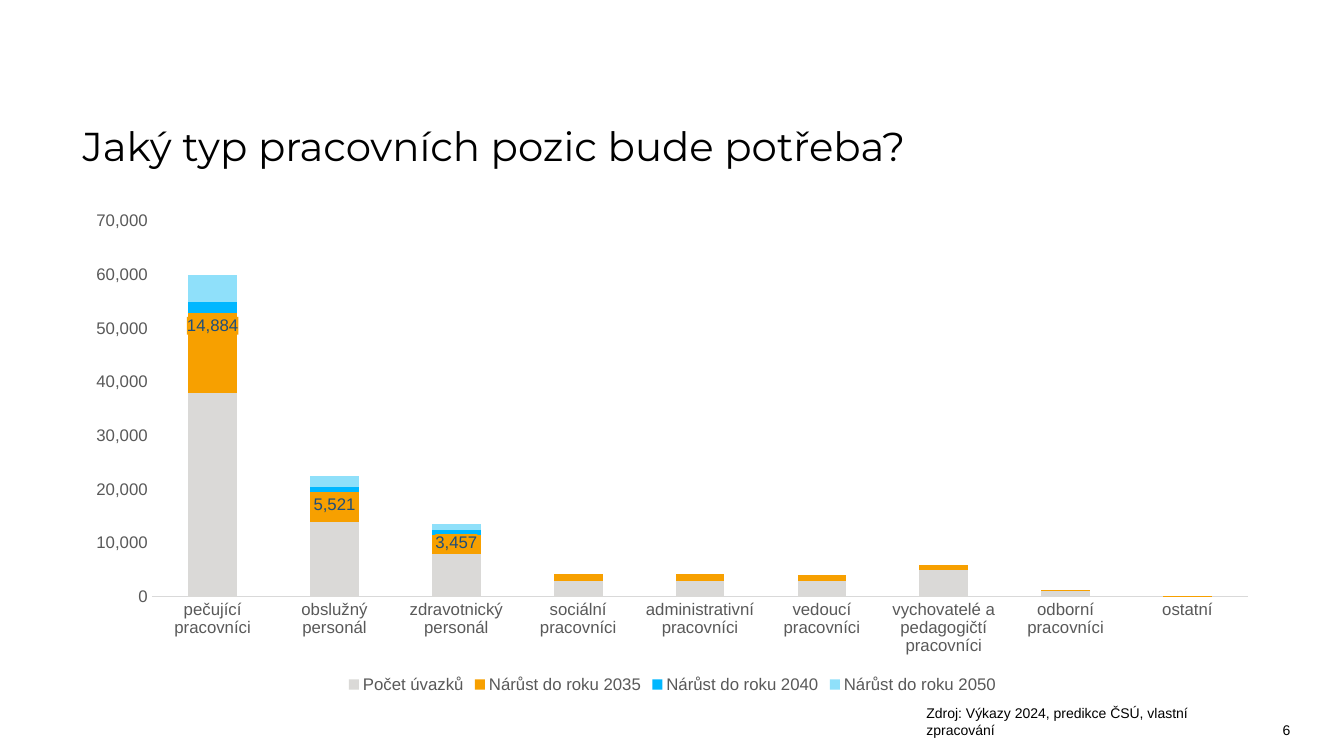
from copy import deepcopy
from lxml.etree import SubElement
from pptx import Presentation
from pptx.chart.data import CategoryChartData
from pptx.dml.color import RGBColor
from pptx.enum.chart import XL_CHART_TYPE, XL_LABEL_POSITION, XL_LEGEND_POSITION, XL_TICK_MARK
from pptx.enum.text import MSO_ANCHOR, PP_ALIGN
from pptx.oxml import parse_xml
from pptx.oxml.ns import nsdecls, qn
from pptx.util import Inches, Pt

# Content
TITLE = "Jaký typ pracovních pozic bude potřeba?"
SOURCE = "Zdroj: Výkazy 2024, predikce ČSÚ, vlastní zpracování"
PAGE = "6"
GREY, ORANGE = RGBColor(0xDA, 0xD9, 0xD7), RGBColor(0xF7, 0xA0, 0x00)
BLUE, LIGHT_BLUE = RGBColor(0x00, 0xB7, 0xFF), RGBColor(0x8F, 0xE0, 0xFA)
BLACK, AXIS_TEXT = RGBColor(0, 0, 0), RGBColor(0x59, 0x59, 0x59)
AXIS_LINE, LABEL_TEXT = RGBColor(0xD9, 0xD9, 0xD9), RGBColor(0x1F, 0x4E, 0x79)
POSITIONS = [
    "pečující pracovníci", "obslužný personál", "zdravotnický personál",
    "sociální pracovníci", "administrativní pracovníci", "vedoucí pracovníci",
    "vychovatelé a pedagogičtí pracovníci", "odborní pracovníci", "ostatní",
]
STAFFING = [
    ("Počet úvazků", GREY, (38000, 14000, 8000, 3000, 3000, 3000, 5000, 1000, 0)),
    ("Nárůst do roku 2035", ORANGE, (14884, 5521, 3457, 1263, 1249, 1007, 850, 241, 88)),
    ("Nárůst do roku 2040", BLUE, (2000, 1000, 1000, 0, 0, 0, 0, 0, 0)),
    ("Nárůst do roku 2050", LIGHT_BLUE, (5000, 2000, 1000, 0, 0, 0, 0, 0, 0)),
]
LABELLED = 3  # only the first positions carry a value label
NUMBER_FORMAT = "#,##0"

# Places in inches: left, top, width, height
TITLE_BOX = (0.72, 1.19, 10.33, 0.57)
CHART_BOX = (0.72, 2, 11.9, 4.92)
SOURCE_BOX = (9.09, 6.94, 3.1, 0.44)
PAGE_BOX = (12.19, 7.08, 1.14, 0.32)
# Shares of the chart's size
PLOT_SHARES = {"x": 0.066, "y": 0.039, "w": 0.914, "h": 0.758}
LABEL_SHIFT = {"x": 0, "y": -0.01}


def style(font, size, color, name="Arial"):
    font.name, font.size, font.color.rgb = name, Pt(size), color


def add_note(slide, text, box, align, anchor):
    frame = slide.shapes.add_textbox(*map(Inches, box)).text_frame
    frame.word_wrap = True
    frame.vertical_anchor = anchor
    frame.text = text
    frame.paragraphs[0].alignment = align
    style(frame.paragraphs[0].runs[0].font, 10, BLACK)


def set_layout(layout, settings):
    manual = SubElement(layout, qn("c:manualLayout"))
    for tag, value in settings.items():
        SubElement(manual, qn(f"c:{tag}")).set("val", str(value))


def add_value_labels(series):
    labels = series.data_labels
    labels.show_value = True
    labels.position = XL_LABEL_POSITION.INSIDE_END
    labels.number_format, labels.number_format_is_linked = NUMBER_FORMAT, False
    style(labels.font, 12, LABEL_TEXT)
    label_xml = labels._element
    label_xml.find(qn("c:txPr")).addprevious(parse_xml(
        f'<c:spPr {nsdecls("c", "a")}><a:solidFill><a:srgbClr val="{ORANGE}"/>'
        '</a:solidFill></c:spPr>'))

    # The last visible label sits a little higher; later ones are hidden
    shared = [deepcopy(part) for part in label_xml if part.tag != qn("c:showLeaderLines")]
    for place, point in enumerate(range(LABELLED - 1, len(POSITIONS))):
        label = parse_xml(f'<c:dLbl {nsdecls("c")}><c:idx val="{point}"/></c:dLbl>')
        if point < LABELLED:
            set_layout(SubElement(label, qn("c:layout")), LABEL_SHIFT)
            label.extend(shared)
        else:
            SubElement(label, qn("c:delete")).set("val", "1")
        label_xml.insert(place, label)


def add_staffing_chart(slide):
    data = CategoryChartData(number_format=NUMBER_FORMAT)
    data.categories = POSITIONS
    for name, _, values in STAFFING:
        data.add_series(name, values)
    chart = slide.shapes.add_chart(
        XL_CHART_TYPE.COLUMN_STACKED, *map(Inches, CHART_BOX), data).chart
    style(chart.font, 12, BLACK)
    chart.has_title = False

    # Stacked columns
    plot = chart.plots[0]
    plot.gap_width, plot.overlap = 150, 100
    plot.vary_by_categories = False
    for series, (_, color, _) in zip(plot.series, STAFFING):
        series.format.fill.solid()
        series.format.fill.fore_color.rgb = color
    add_value_labels(plot.series[1])

    # Axes and legend
    for axis in (chart.category_axis, chart.value_axis):
        axis.major_tick_mark = axis.minor_tick_mark = XL_TICK_MARK.NONE
        axis.has_major_gridlines = False
        style(axis.tick_labels.font, 12, AXIS_TEXT)
    chart.category_axis.format.line.color.rgb = AXIS_LINE
    chart.category_axis.format.line.width = Pt(0.75)
    scale = chart.value_axis
    scale.minimum_scale, scale.maximum_scale, scale.major_unit = 0, 70000, 10000
    scale.tick_labels.number_format = NUMBER_FORMAT
    scale.tick_labels.number_format_is_linked = False
    scale.format.line.fill.background()
    chart.has_legend = True
    chart.legend.position = XL_LEGEND_POSITION.BOTTOM
    chart.legend.include_in_layout = False
    style(chart.legend.font, 12, AXIS_TEXT)

    # Fixed inner plot area
    plot_area = chart._chartSpace.chart.plotArea
    layout = plot_area.find(qn("c:layout"))
    if layout is None:
        layout = parse_xml(f'<c:layout {nsdecls("c")}/>')
        plot_area.insert(0, layout)
    set_layout(layout, {"layoutTarget": "inner", "xMode": "edge", "yMode": "edge",
                        **PLOT_SHARES})


def main():
    deck = Presentation()
    deck.slide_width, deck.slide_height = Inches(13.33), Inches(7.5)
    slide = deck.slides.add_slide(deck.slide_layouts[5])

    # Title
    title = slide.shapes.title
    title.left, title.top, title.width, title.height = map(Inches, TITLE_BOX)
    title.text_frame.text = TITLE
    title.text_frame.vertical_anchor = MSO_ANCHOR.MIDDLE
    heading = title.text_frame.paragraphs[0]
    heading.alignment, heading.line_spacing = PP_ALIGN.LEFT, 0.9
    style(heading.runs[0].font, 28.8, BLACK, "Montserrat")

    add_staffing_chart(slide)

    # Source and page number
    add_note(slide, SOURCE, SOURCE_BOX, PP_ALIGN.LEFT, MSO_ANCHOR.TOP)
    add_note(slide, PAGE, PAGE_BOX, PP_ALIGN.CENTER, MSO_ANCHOR.MIDDLE)
    deck.save("out.pptx")


if __name__ == "__main__":
    main()
